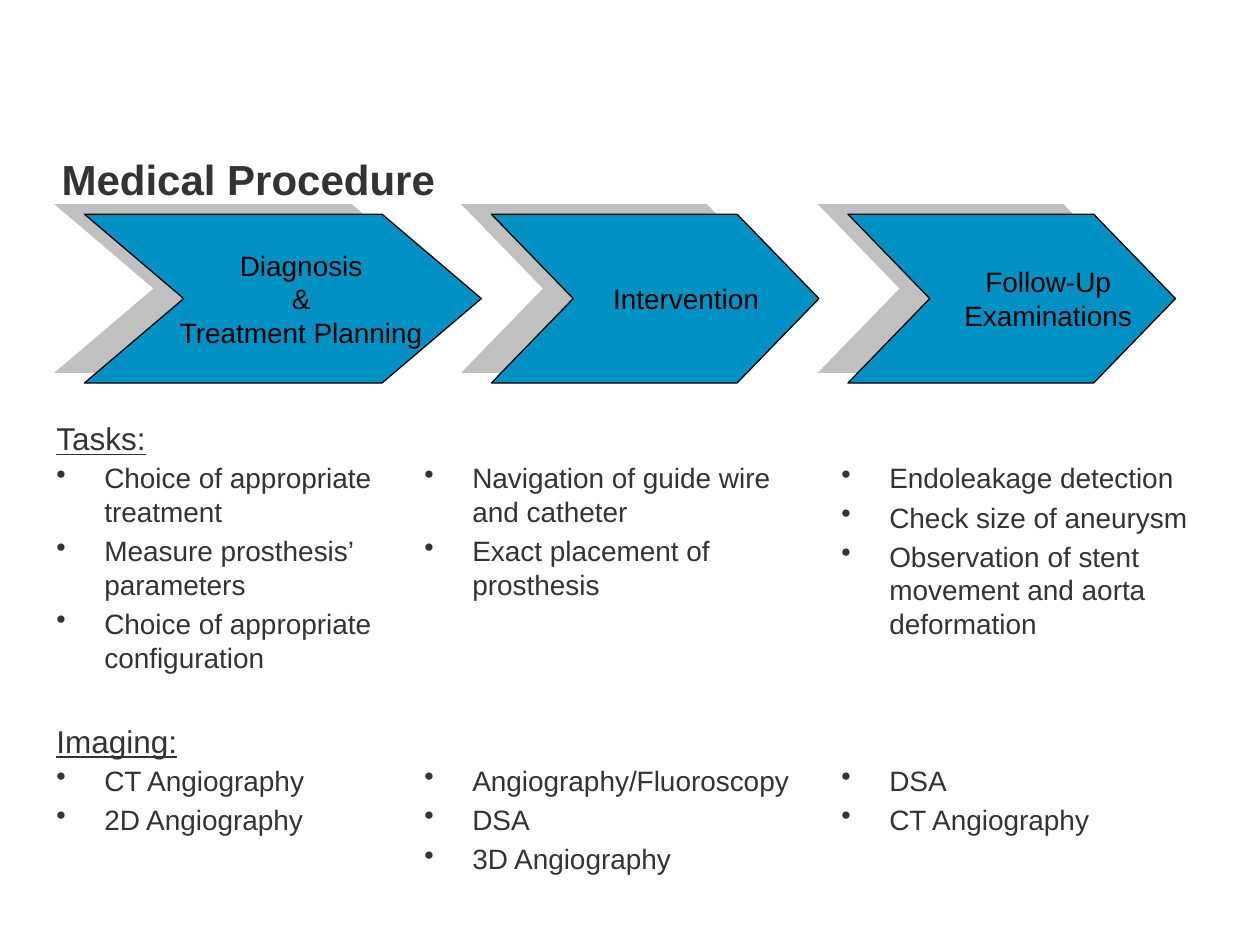
from dataclasses import dataclass

import pptx
import pptx.util
import pptx.dml.color
import pptx.enum.shapes
import pptx.enum.text
import lxml.etree

Pt, Inches = pptx.util.Pt, pptx.util.Inches
Align, Anchor = pptx.enum.text.PP_ALIGN, pptx.enum.text.MSO_ANCHOR


@dataclass(frozen=True)
class Theme:
    """Colours, font and type sizes of the slide."""
    font: str = "Arial"
    ink: str = "333333"
    black: str = "000000"
    blue: str = "0091C4"
    grey: str = "C0C0C0"
    title: int = 24
    head: int = 18
    body: int = 16


def rgb(code):
    """Turn a hex code into a colour."""
    return pptx.dml.color.RGBColor.from_string(code)


def write(frame, lines, *, font, size, color, bold=False, under=False, align=Align.LEFT,
          anchor=Anchor.TOP, wrap=True, left=0, bullet=False, gap=0):
    """Fill a text frame with one paragraph per line."""
    frame.word_wrap, frame.vertical_anchor = wrap, anchor
    for i, line in enumerate(lines):
        para = frame.paragraphs[0] if i == 0 else frame.add_paragraph()
        para.alignment = align
        props = para._p.get_or_add_pPr()
        props.set("marL", str(Inches(left)))
        if bullet:
            props.set("indent", str(-Inches(left)))
            tag = lxml.etree.SubElement(props, pptx.oxml.ns.qn("a:buChar"))
            tag.set("char", "•")
        if i and gap:
            para.space_before = Pt(gap)
        run = para.add_run()
        run.text = line
        run.font.name, run.font.size = font, Pt(size)
        run.font.bold, run.font.underline = bold, under
        run.font.color.rgb = rgb(color)


class Deck:
    """Draw on one slide laid out in 100 columns and 75 rows."""
    cols, rows = 100, 75

    def __init__(self, theme):
        """Open a blank slide."""
        self.theme = theme
        self.show = pptx.Presentation()
        self.show.slide_width, self.show.slide_height = Inches(10), Inches(7.5)
        self.slide = self.show.slides.add_slide(self.show.slide_layouts[6])

    def place(self, col, row, wide, high):
        """Turn grid units into slide lengths."""
        x, y = self.show.slide_width / self.cols, self.show.slide_height / self.rows
        return round(col * x), round(row * y), round(wide * x), round(high * y)

    def text(self, area, lines, **style):
        """Add a text box."""
        box = self.slide.shapes.add_textbox(*self.place(*area))
        style = {"font": self.theme.font, "color": self.theme.ink, **style}
        write(box.text_frame, lines, **style)

    def title(self, area, words):
        """Add the slide title."""
        self.text(area, [words], size=self.theme.title, bold=True, anchor=Anchor.BOTTOM)

    def head(self, area, words):
        """Add an underlined heading."""
        self.text(area, [words], size=self.theme.head, under=True)

    def list(self, area, items):
        """Add a bulleted list."""
        self.text(area, items, size=self.theme.body, left=0.38, bullet=True,
                  gap=self.theme.body * 0.2)

    def arrow(self, area, notch, fill, lines=(), left=0):
        """Add a chevron, outlined when it has a label."""
        kind = pptx.enum.shapes.MSO_SHAPE.CHEVRON
        shape = self.slide.shapes.add_shape(kind, *self.place(*area))
        shape.adjustments[0] = notch
        shape.shadow.inherit = False
        shape.fill.solid()
        shape.fill.fore_color.rgb = rgb(fill)
        if not lines:
            shape.line.fill.background()
            return
        shape.line.color.rgb, shape.line.width = rgb(self.theme.black), Pt(0.75)
        write(shape.text_frame, lines, font=self.theme.font, size=self.theme.body,
              color=self.theme.black, align=Align.CENTER, anchor=Anchor.MIDDLE,
              wrap=False, left=left)


STEPS = [
    (6.7, 31.5, 0.588, 0.29, ["Diagnosis", "&", "Treatment Planning"]),
    (39, 26, 0.485, 0.49, ["Intervention"]),
    (67.3, 26, 0.485, 0.58, ["Follow-Up", "Examinations"]),
]
LANES = [(3.5, 30.7), (32.7, 31.5), (65.8, 31.5)]
PARTS = [
    ("Tasks:", 32.8, 19, [
        ["Choice of appropriate treatment", "Measure prosthesis’ parameters",
         "Choice of appropriate configuration"],
        ["Navigation of guide wire and catheter", "Exact placement of prosthesis"],
        ["Endoleakage detection", "Check size of aneurysm",
         "Observation of stent movement and aorta deformation"],
    ]),
    ("Imaging:", 56.8, 10, [
        ["CT Angiography", "2D Angiography"],
        ["Angiography/Fluoroscopy", "DSA", "3D Angiography"],
        ["DSA", "CT Angiography"],
    ]),
]


def main():
    """Build the slide and save it."""
    theme = Theme()
    deck = Deck(theme)
    deck.title((3.9, 10, 92.1, 6.7), "Medical Procedure")
    for col, wide, notch, _, _ in STEPS:
        deck.arrow((col - 2.4, 16.2, wide, 13.4), notch, theme.grey)
    for col, wide, notch, left, label in STEPS:
        deck.arrow((col, 17, wide, 13.4), notch, theme.blue, label, left)
    for name, row, high, lists in PARTS:
        deck.head((*LANES[0][:1], row, LANES[0][1], 3.8), name)
        for (col, wide), items in zip(LANES, lists):
            deck.list((col, row + 3.3, wide, high), items)
    deck.show.save("out.pptx")


if __name__ == "__main__":
    main()
